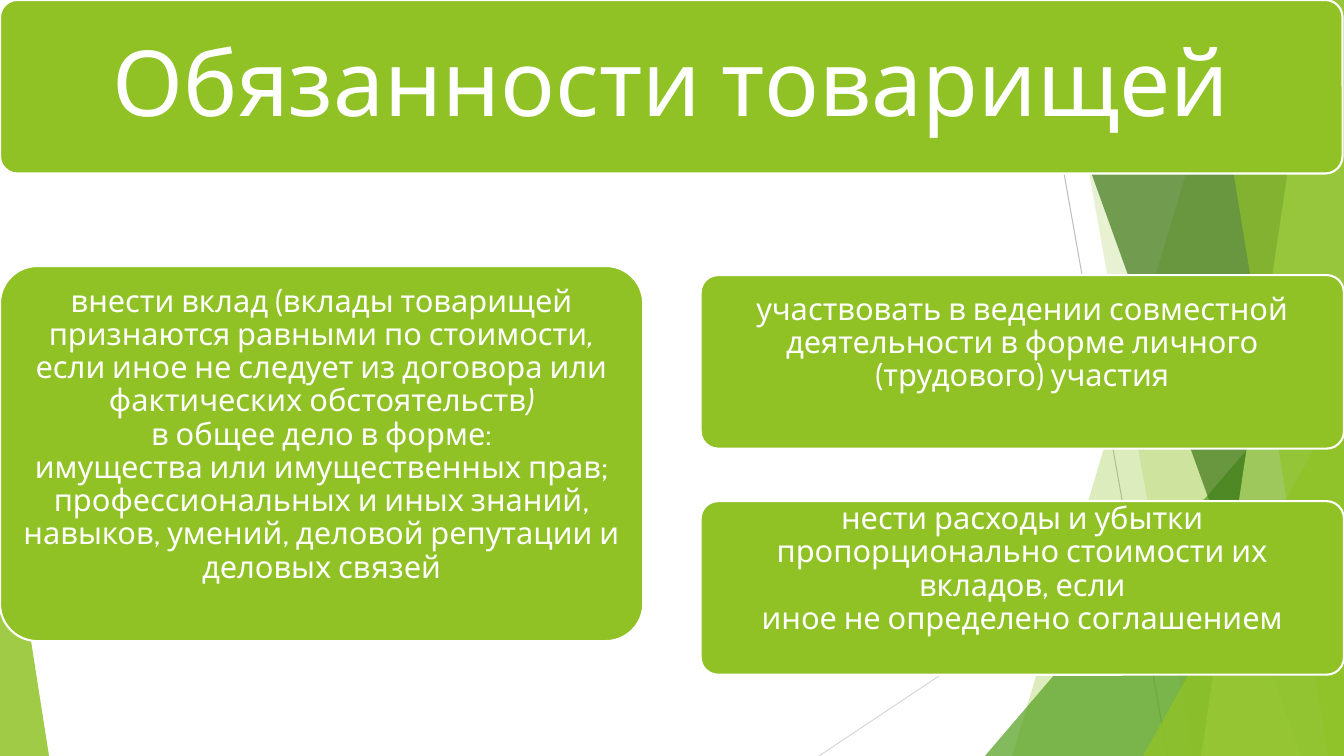
from dataclasses import dataclass

from lxml import etree
from pptx import Presentation
from pptx.dml.color import RGBColor
from pptx.enum.shapes import MSO_CONNECTOR as Connector, MSO_SHAPE as Shape
from pptx.enum.text import MSO_ANCHOR as Anchor, PP_ALIGN as Align
from pptx.oxml.ns import qn
from pptx.util import Pt


@dataclass(frozen=True)
class Theme:
    font: str = "Cabin"
    title_size: float = 65
    body_size: float = 22
    green: str = "90C226"
    mid_green: str = "54A021"
    dark_green: str = "3F7819"
    light_green: str = "C0E474"
    white: str = "FFFFFF"
    dark_rule: str = "BFBFBF"
    light_rule: str = "D9D9D9"


THEME = Theme()
WIDTH, HEIGHT = 960, 540

# Each run is (text, italic); a newline is a line break.
CONTRIBUTION = [
    ("внести вклад (вклады товарищей признаются равными по стоимости", False),
    (",\n", True),
    ("если иное не следует из договора или фактических обстоятельств", False),
    (")\n", True),
    ("в общее дело в форме:\n"
     "имущества или имущественных прав;\n"
     "профессиональных и иных знаний, навыков, умений, "
     "деловой репутации и деловых связей\n", False),
]
PARTICIPATION = [
    ("участвовать в ведении совместной деятельности "
     "в форме личного (трудового) участия\n", False),
]
EXPENSES = [
    ("нести расходы и убытки пропорционально стоимости их вкладов, если\n"
     "иное не определено соглашением\n", False),
]


def rgb(color):
    return RGBColor.from_string(color)


def fill_translucent(sp, color, percent):
    sp.shadow.inherit = False
    sp.line.fill.background()
    sp.fill.solid()
    sp.fill.fore_color.rgb = rgb(color)
    clr = sp.fill._xPr.find(qn("a:solidFill"))[0]
    etree.SubElement(clr, qn("a:alpha"), val=str(percent * 1000))


def add_rule(slide, start, end, color):
    line = slide.shapes.add_connector(
        Connector.STRAIGHT, *(Pt(v) for v in (*start, *end)))
    line.line.color.rgb = rgb(color)
    line.line.width = Pt(0.75)
    etree.SubElement(line._element.spPr, qn("a:effectLst"))


def add_band(slide, box, top_x, bottom_x, color, percent):
    """Fill the part of the box to the right of a slanted edge."""
    left, top, width, height = box
    right, bottom = left + width, top + height
    builder = slide.shapes.build_freeform(Pt(left + top_x), Pt(top), scale=1.0)
    corners = [(right, top), (right, bottom), (left + bottom_x, bottom)]
    builder.add_line_segments([(Pt(x), Pt(y)) for x, y in corners], close=True)
    fill_translucent(builder.convert_to_shape(), color, percent)


def add_corner(slide, box, width, height, apex, color, percent):
    """Put a right triangle in a lower corner: apex 0 is left, 1 is right."""
    left, top, box_width, box_height = box
    sp = slide.shapes.add_shape(
        Shape.ISOSCELES_TRIANGLE,
        Pt(left + apex * (box_width - width)), Pt(top + box_height - height),
        Pt(width), Pt(height))
    sp.adjustments[0] = apex
    fill_translucent(sp, color, percent)


def add_backdrop(slide, box):
    left, top, width, height = box
    right, bottom = left + width, top + height
    add_rule(slide, (left + 738, top), (left + 834, bottom), THEME.dark_rule)
    add_rule(slide, (right, top + 290), (left + 585, bottom), THEME.light_rule)
    facets = [
        (add_band, 884, 723, THEME.green, 30),
        (add_band, 756, 852, THEME.green, 20),
        (add_corner, 256.5, 300, 1, THEME.mid_green, 72),
        (add_band, 735, 929.5, THEME.dark_green, 70),
        (add_band, 938, 858, THEME.light_green, 70),
        (add_band, 861, 949, THEME.green, 65),
        (add_corner, 143.5, 257, 1, THEME.green, 80),
        (add_corner, 35, 224, 0, THEME.green, 85),
    ]
    for add_facet, *details in facets:
        add_facet(slide, box, *details)


def write_runs(p, runs):
    for text, italic in runs:
        for i, part in enumerate(text.split("\n")):
            if i:
                p.add_line_break()
            if part:
                r = p.add_run()
                r.text = part
                if italic:
                    r.font.italic = True


def add_card(slide, box, runs, size, inset):
    sp = slide.shapes.add_shape(Shape.ROUNDED_RECTANGLE, *(Pt(v) for v in box))
    sp.adjustments[0] = 0.1
    sp.shadow.inherit = False
    sp.fill.solid()
    sp.fill.fore_color.rgb = rgb(THEME.green)
    sp.line.color.rgb = rgb(THEME.white)
    sp.line.width = Pt(1.5)

    tf = sp.text_frame
    tf.word_wrap = True
    tf.vertical_anchor = Anchor.MIDDLE
    tf.margin_left = tf.margin_right = Pt(inset)
    tf.margin_top = tf.margin_bottom = Pt(inset)
    p = tf.paragraphs[0]
    p.alignment = Align.CENTER
    p.line_spacing = 0.9
    p.space_after = Pt(0.35 * size)
    p.font.name = THEME.font
    p.font.size = Pt(size)
    p.font.color.rgb = rgb(THEME.white)
    write_runs(p, runs)


def add_title(slide, box):
    add_card(slide, box, [("Обязанности товарищей", False)],
             THEME.title_size, 19.5)


def add_duties(slide, box):
    """One tall card on the left, two short ones stacked on the right."""
    left, top, width, height = box
    card_width, short_height, gap = 459.5, 124, 37.5
    right_x = left + width - card_width
    right_y = top + 6.5
    cards = [
        ((left, top, card_width, height), CONTRIBUTION),
        ((right_x, right_y, card_width, short_height), PARTICIPATION),
        ((right_x, right_y + short_height + gap, card_width, short_height),
         EXPENSES),
    ]
    for card_box, runs in cards:
        add_card(slide, card_box, runs, THEME.body_size, 6.6)


def main():
    prs = Presentation()
    prs.slide_width, prs.slide_height = Pt(WIDTH), Pt(HEIGHT)
    slide = prs.slides.add_slide(prs.slide_layouts[6])
    add_backdrop(slide, (0, 0, WIDTH, HEIGHT))
    add_title(slide, (0, 0, WIDTH - 1, 124))
    add_duties(slide, (0, 190, WIDTH, 268))
    prs.save("out.pptx")


if __name__ == "__main__":
    main()
